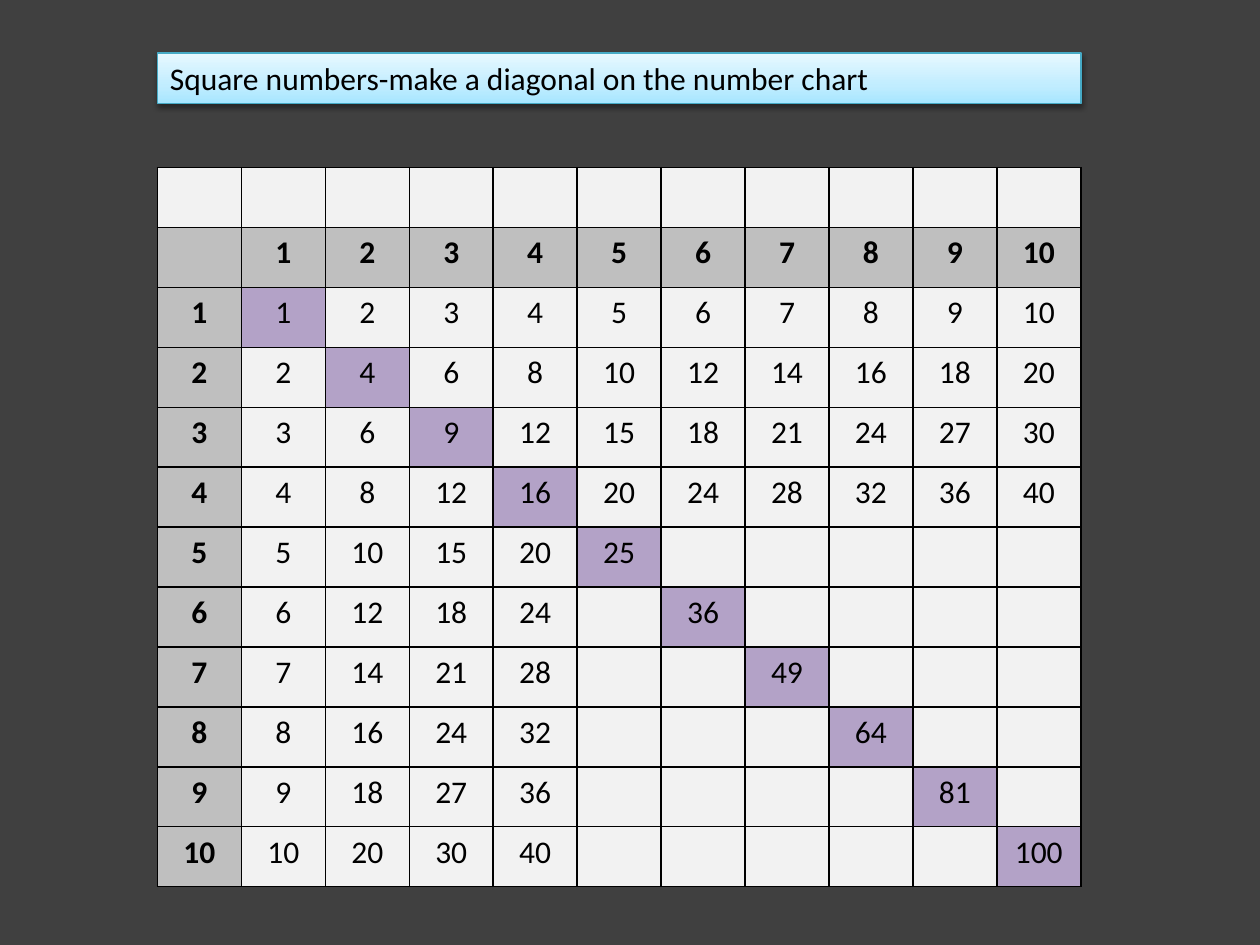
import pptx
import pptx.util
import pptx.dml.color
import pptx.enum.shapes
import pptx.enum.text
import pptx.oxml
from pptx.util import Inches

TITLE = "Square numbers-make a diagonal on the number chart"
FACTORS = list(range(1, 11))
FILLED_LINES = 4
COLOURS = {"page": "404040", "plain": "F2F2F2", "heading": "BFBFBF",
           "square": "B3A2C7", "ink": "000000", "title_line": "46AAC5"}
TITLE_STOPS = [(0, "A7E6FF"), (35, "C1EDFF"), (100, "E7F8FF")]
LEFT, WIDTH = 1.25, 7.33
TITLE_TOP, TITLE_HEIGHT = 0.42, 0.4
CHART_TOP, CHART_HEIGHT = 1.33, 5.71
NAMESPACE = 'xmlns:a="http://schemas.openxmlformats.org/drawingml/2006/main"'


def colour(code):
    return pptx.dml.color.RGBColor.from_string(code)


def paint(fill, code):
    fill.solid()
    fill.fore_color.rgb = colour(code)


def write(frame, text, bold=False, align=pptx.enum.text.PP_ALIGN.CENTER):
    para = frame.paragraphs[0]
    para.text = text
    para.alignment = align
    para.font.name = "Calibri"
    para.font.size = pptx.util.Pt(18)
    para.font.bold = bold
    para.font.color.rgb = colour(COLOURS["ink"])


def add_borders(cell):
    properties = cell._tc.get_or_add_tcPr()
    for index, side in enumerate("LRTB"):
        properties.insert(index, pptx.oxml.parse_xml(
            f'<a:ln{side} {NAMESPACE} w="12700"><a:solidFill>'
            f'<a:srgbClr val="{COLOURS["ink"]}"/></a:solidFill></a:ln{side}>'))


def add_title(page):
    box = page.shapes.add_shape(
        pptx.enum.shapes.MSO_SHAPE.RECTANGLE, Inches(LEFT), Inches(TITLE_TOP),
        Inches(WIDTH), Inches(TITLE_HEIGHT))
    box.shadow.inherit = False
    box.line.color.rgb = colour(COLOURS["title_line"])
    box.line.width = pptx.util.Pt(0.75)
    stops = "".join(f'<a:gs pos="{place * 1000}"><a:srgbClr val="{code}"/></a:gs>'
                    for place, code in TITLE_STOPS)
    properties = box._element.spPr
    properties.insert(2, pptx.oxml.parse_xml(
        f'<a:gradFill {NAMESPACE} rotWithShape="1"><a:gsLst>{stops}</a:gsLst>'
        '<a:lin ang="16200000" scaled="0"/></a:gradFill>'))
    properties[-1].append(pptx.oxml.parse_xml(
        f'<a:outerShdw {NAMESPACE} blurRad="39370" dist="20320" dir="5400000" '
        f'rotWithShape="0"><a:srgbClr val="{COLOURS["ink"]}">'
        '<a:alpha val="38000"/></a:srgbClr></a:outerShdw>'))
    frame = box.text_frame
    frame.word_wrap = True
    frame.auto_size = pptx.enum.text.MSO_AUTO_SIZE.SHAPE_TO_FIT_TEXT
    frame.vertical_anchor = pptx.enum.text.MSO_ANCHOR.TOP
    write(frame, TITLE, align=pptx.enum.text.PP_ALIGN.LEFT)


def chart_cell(row, column):
    if row is None:
        return "", "plain"
    if row == 0 or column == 0:
        return str(row + column or ""), "heading"
    if row == column:
        return str(row * column), "square"
    shown = min(row, column) <= FILLED_LINES
    return str(row * column) if shown else "", "plain"


def add_number_chart(page):
    rows, columns = [None, 0] + FACTORS, [0] + FACTORS
    table = page.shapes.add_table(
        len(rows), len(columns), Inches(LEFT), Inches(CHART_TOP),
        Inches(WIDTH), Inches(CHART_HEIGHT)).table
    table.first_row = table.horz_banding = False
    for r, row in enumerate(rows):
        for c, column in enumerate(columns):
            text, role = chart_cell(row, column)
            cell = table.cell(r, c)
            paint(cell.fill, COLOURS[role])
            add_borders(cell)
            write(cell.text_frame, text, bold=role == "heading")


def main():
    deck = pptx.Presentation()
    deck.slide_width, deck.slide_height = Inches(10), Inches(7.5)
    page = deck.slides.add_slide(deck.slide_layouts[6])
    paint(page.background.fill, COLOURS["page"])
    add_number_chart(page)
    add_title(page)
    deck.save("out.pptx")


if __name__ == "__main__":
    main()
